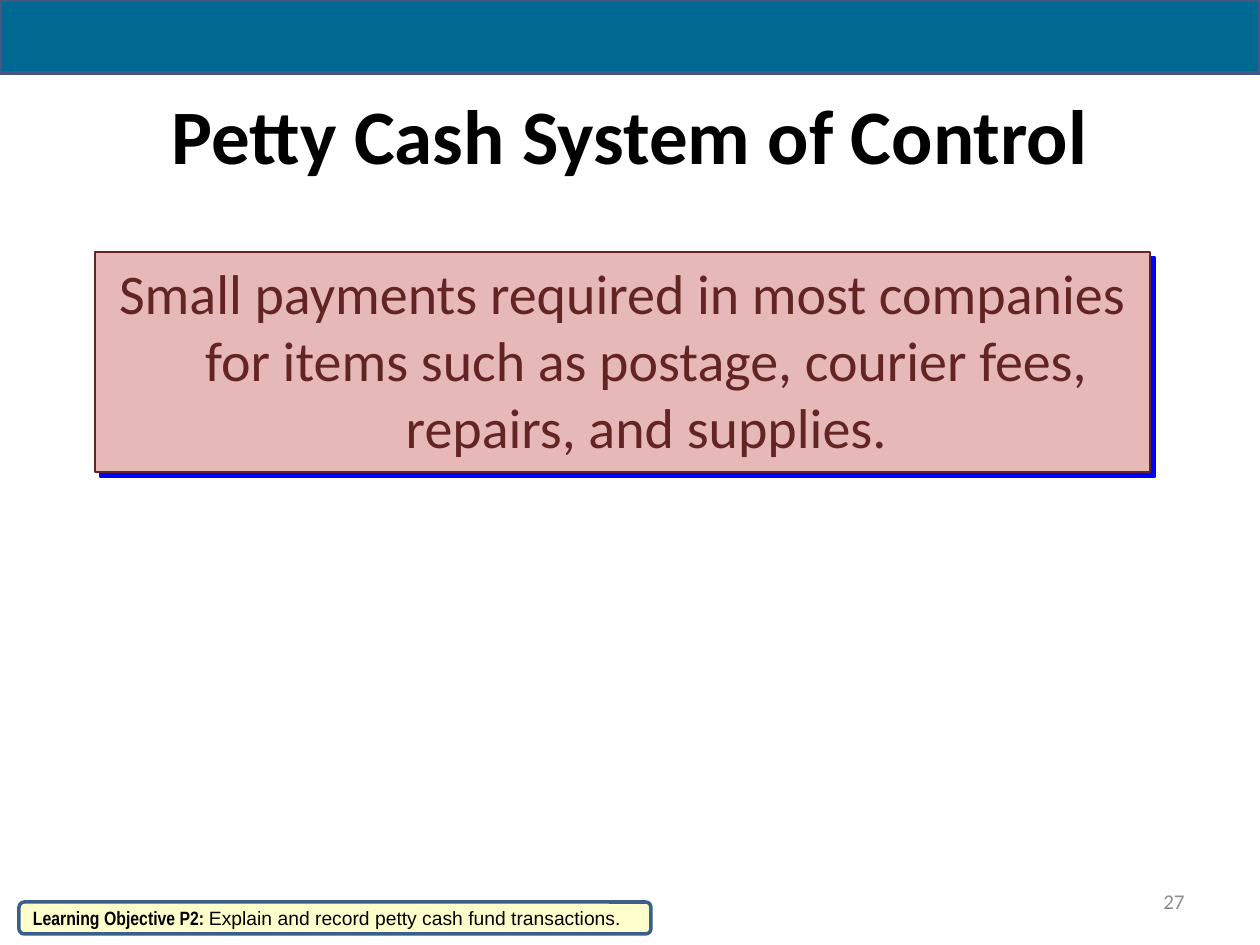
from lxml.etree import SubElement
from pptx import Presentation
from pptx.dml.color import RGBColor
from pptx.enum.shapes import MSO_SHAPE as Shape
from pptx.enum.text import MSO_ANCHOR as Anchor, PP_ALIGN as Align
from pptx.oxml.ns import qn
from pptx.util import Emu, Pt


def px(count):
    """Turn pixels at 126 to the inch into EMU."""
    return Emu(round(count * 914400 / 126))


def color(code):
    """Turn a hex string into a colour."""
    return RGBColor.from_string(code)


def add_panel(page, kind, place, fill, line, width):
    """Add a filled and outlined shape without a shadow."""
    panel = page.shapes.add_shape(kind, *map(px, place))
    panel.shadow.inherit = False
    panel.fill.solid()
    panel.fill.fore_color.rgb = color(fill)
    panel.line.color.rgb = color(line)
    panel.line.width = Pt(width)
    return panel


def add_label(page, place):
    """Add an empty text box."""
    return page.shapes.add_textbox(*map(px, place))


def write(box, spans, align, anchor=Anchor.MIDDLE):
    """Write one paragraph of (text, font, size, colour, bold) runs."""
    frame = box.text_frame
    frame.word_wrap = True
    frame.vertical_anchor = anchor
    para = frame.paragraphs[0]
    para.alignment = align
    for text, name, size, ink, bold in spans:
        span = para.add_run()
        span.text = text
        span.font.name = name
        span.font.size = Pt(size)
        span.font.color.rgb = color(ink)
        span.font.bold = bold
    return para


def hang(para, indent):
    """Give a paragraph a hanging indent."""
    props = para._p.get_or_add_pPr()
    props.set("marL", str(px(indent)))
    props.set("indent", str(-px(indent)))


def cast_shadow(panel, code, distance, degrees):
    """Add a hard offset shadow to a shape."""
    effects = panel._element.spPr.find(qn("a:effectLst"))
    shadow = SubElement(effects, qn("a:outerShdw"), dist=str(Pt(distance)),
                        dir=str(degrees * 60000), algn="ctr", rotWithShape="0")
    SubElement(shadow, qn("a:srgbClr"), val=code)


def main():
    """Build the petty cash slide."""
    deck = Presentation()
    deck.slide_width, deck.slide_height = px(1260), px(945)
    page = deck.slides.add_slide(deck.slide_layouts[6])

    title = add_label(page, (63, 73, 1134, 122))
    write(title, [("Petty Cash System of Control", "Calibri", 44, "000000", True)], Align.CENTER)

    statement = add_panel(page, Shape.RECTANGLE, (95, 252, 1055, 220), "E6B9B8", "632523", 1)
    cast_shadow(statement, "0000FF", 4.2, 45)
    para = write(statement, [(
        "Small payments required in most companies for items such as postage, "
        "courier fees, repairs, and supplies.", "Calibri", 32, "632523", False,
    )], Align.CENTER, Anchor.TOP)
    para.space_before = Pt(6.4)
    hang(para, 48)

    add_panel(page, Shape.RECTANGLE, (0, 0, 1260, 73), "006991", "475785", 2.25)

    number = add_label(page, (903, 876, 294, 50))
    write(number, [("27", "Calibri", 12, "8C8C8C", False)], Align.RIGHT)

    objective = add_panel(page, Shape.ROUNDED_RECTANGLE, (19, 902, 632, 32), "FFFFCC", "3A5F8C", 2)
    write(objective, [
        ("Learning Objective P2: ", "Arial Narrow", 11, "000000", True),
        ("Explain and record petty cash fund transactions.", "Arial", 11, "000000", False),
    ], Align.LEFT)

    deck.save("out.pptx")


if __name__ == "__main__":
    main()
